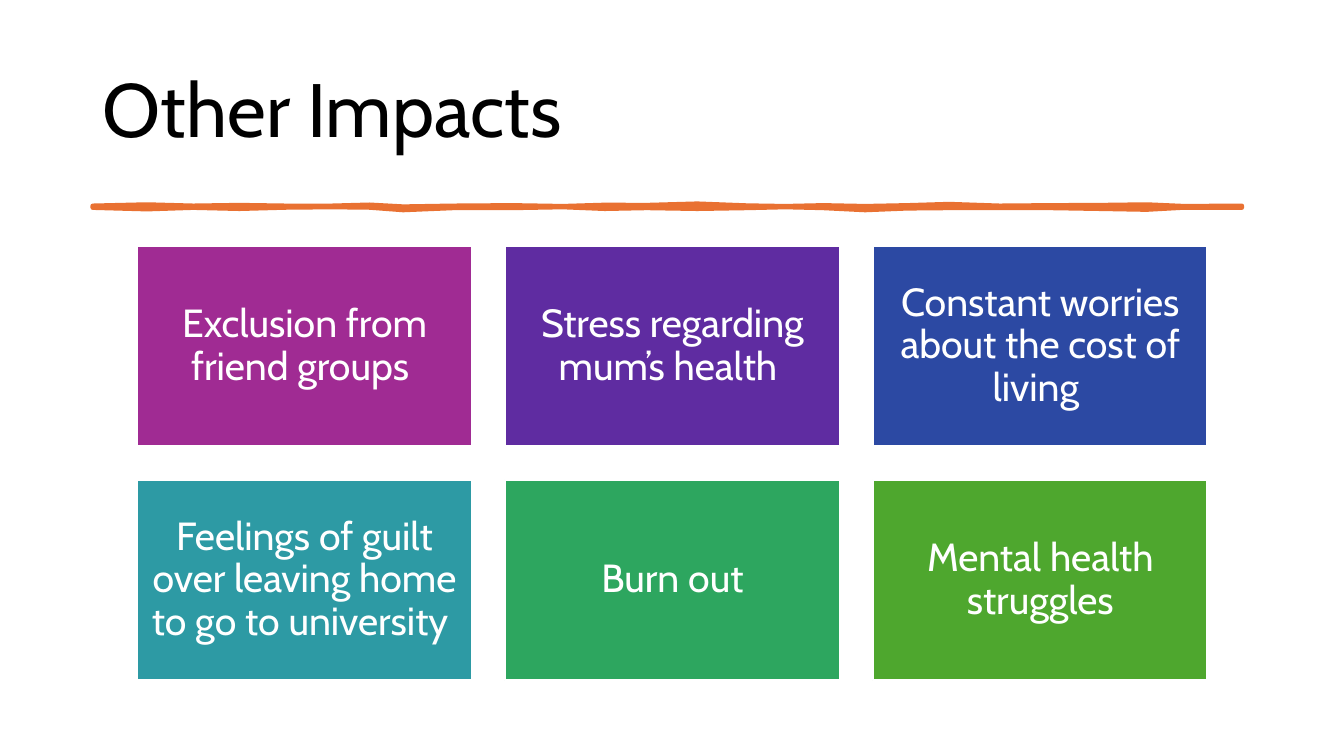
"""Build the Other Impacts slide: a title, a wavy rule and a grid of tiles."""
import dataclasses

import pptx
import pptx.dml.color
import pptx.enum.shapes
import pptx.enum.text
import pptx.util

COLS, ROWS = 160, 90
CELL = pptx.util.Inches(1 / 12)
FONT = "Cabin"
WHITE, BLACK, ORANGE = "FFFFFF", "000000", "E97132"
ALIGN = pptx.enum.text.PP_ALIGN


@dataclasses.dataclass(frozen=True)
class Box:
    """Place and size in grid columns and rows."""
    left: float
    top: float
    width: float
    height: float


@dataclasses.dataclass(frozen=True)
class Tile:
    """Text and fill of one tile."""
    text: str
    fill: str


@dataclasses.dataclass(frozen=True)
class Wave:
    """Upper and lower edge of the rule at one column."""
    col: float
    top: float
    base: float


HEAD = Box(11.04, 4.8, 138, 17.4)
FIRST = Box(16.32, 29.28, 39.84, 23.88)
STEP_X, STEP_Y, PER_ROW = 43.8, 27.84, 3
TILES = (
    Tile("Exclusion from friend groups ", "A02B93"),
    Tile("Stress regarding mum’s health ", "5F2CA1"),
    Tile("Constant worries about the cost of living ", "2C49A3"),
    Tile("Feelings of guilt over leaving home to go to university ", "2D9AA4"),
    Tile("Burn out", "2DA65F"),
    Tile("Mental health struggles", "4EA72E"),
)
WAVES = (
    Wave(11.04, 24.5, 24.72), Wave(17.5, 24.35, 24.9), Wave(23, 24.5, 24.72),
    Wave(28.5, 24.42, 24.85), Wave(34, 24.5, 24.7), Wave(39.5, 24.5, 24.65),
    Wave(44, 24.38, 24.7), Wave(48, 24.6, 25), Wave(54, 24.5, 24.75),
    Wave(61, 24.45, 24.75), Wave(67, 24.55, 24.65), Wave(72, 24.4, 24.85),
    Wave(77, 24.42, 24.75), Wave(83, 24.25, 24.85), Wave(89, 24.48, 24.75),
    Wave(93.5, 24.55, 24.65), Wave(98, 24.45, 24.75), Wave(103, 24.55, 25),
    Wave(108, 24.45, 24.8), Wave(113, 24.3, 24.75), Wave(119, 24.5, 24.75),
    Wave(125, 24.45, 24.75), Wave(131, 24.42, 24.85), Wave(136.5, 24.35, 24.95),
    Wave(141, 24.55, 24.7), Wave(147.84, 24.5, 24.72),
)


def span(num: float) -> int:
    """Turn grid cells into a length."""
    return round(num * CELL)


def tint(code: str) -> pptx.dml.color.RGBColor:
    """Turn a hex string into a colour."""
    return pptx.dml.color.RGBColor.from_string(code)


def place(box: Box) -> tuple[int, ...]:
    """Give a box as slide lengths."""
    return tuple(span(num) for num in dataclasses.astuple(box))


def paint(shape, fill: str, line: str, width: float) -> None:
    """Set the fill and line of a shape and drop its shadow."""
    shape.shadow.inherit = False
    shape.fill.solid()
    shape.fill.fore_color.rgb = tint(fill)
    shape.line.color.rgb = tint(line)
    shape.line.width = pptx.util.Pt(width)


def write(shape, text: str, *, size: float, color: str,
          align: ALIGN = ALIGN.LEFT, inset: float = 1.2) -> None:
    """Put formatted text in a shape."""
    frame = shape.text_frame
    frame.word_wrap = True
    frame.auto_size = pptx.enum.text.MSO_AUTO_SIZE.NONE
    frame.vertical_anchor = pptx.enum.text.MSO_ANCHOR.MIDDLE
    frame.margin_left = frame.margin_right = span(inset)
    frame.margin_top = frame.margin_bottom = span(inset)
    para = frame.paragraphs[0]
    para.alignment = align
    para.line_spacing = 0.9
    run = para.add_run()
    run.text = text
    run.font.name = FONT
    run.font.size = pptx.util.Pt(size)
    run.font.color.rgb = tint(color)


def add_head(slide) -> None:
    """Move and fill the title."""
    title = slide.shapes.title
    title.left, title.top, title.width, title.height = place(HEAD)
    write(title, "Other Impacts", size=54, color=BLACK)


def add_rule(slide) -> None:
    """Draw the wavy rule below the title."""
    edge = [(span(wave.col), span(wave.top)) for wave in WAVES]
    edge += [(span(wave.col), span(wave.base)) for wave in reversed(WAVES)]
    pen = slide.shapes.build_freeform(*edge[0])
    pen.add_line_segments(edge[1:], close=True)
    paint(pen.convert_to_shape(), ORANGE, ORANGE, 3.25)


def add_tile(slide, tile: Tile, num: int) -> None:
    """Draw one tile at its grid place."""
    row, col = divmod(num, PER_ROW)
    box = dataclasses.replace(FIRST, left=FIRST.left + col * STEP_X,
                              top=FIRST.top + row * STEP_Y)
    kind = pptx.enum.shapes.MSO_SHAPE.RECTANGLE
    shape = slide.shapes.add_shape(kind, *place(box))
    paint(shape, tile.fill, WHITE, 1.5)
    write(shape, tile.text, size=28, color=WHITE, align=ALIGN.CENTER, inset=1.44)


def main() -> None:
    """Build and save the slide."""
    deck = pptx.Presentation()
    deck.slide_width, deck.slide_height = span(COLS), span(ROWS)
    slide = deck.slides.add_slide(deck.slide_layouts.get_by_name("Title Only"))
    add_head(slide)
    add_rule(slide)
    for num, tile in enumerate(TILES):
        add_tile(slide, tile, num)
    deck.save("out.pptx")


if __name__ == "__main__":
    main()
